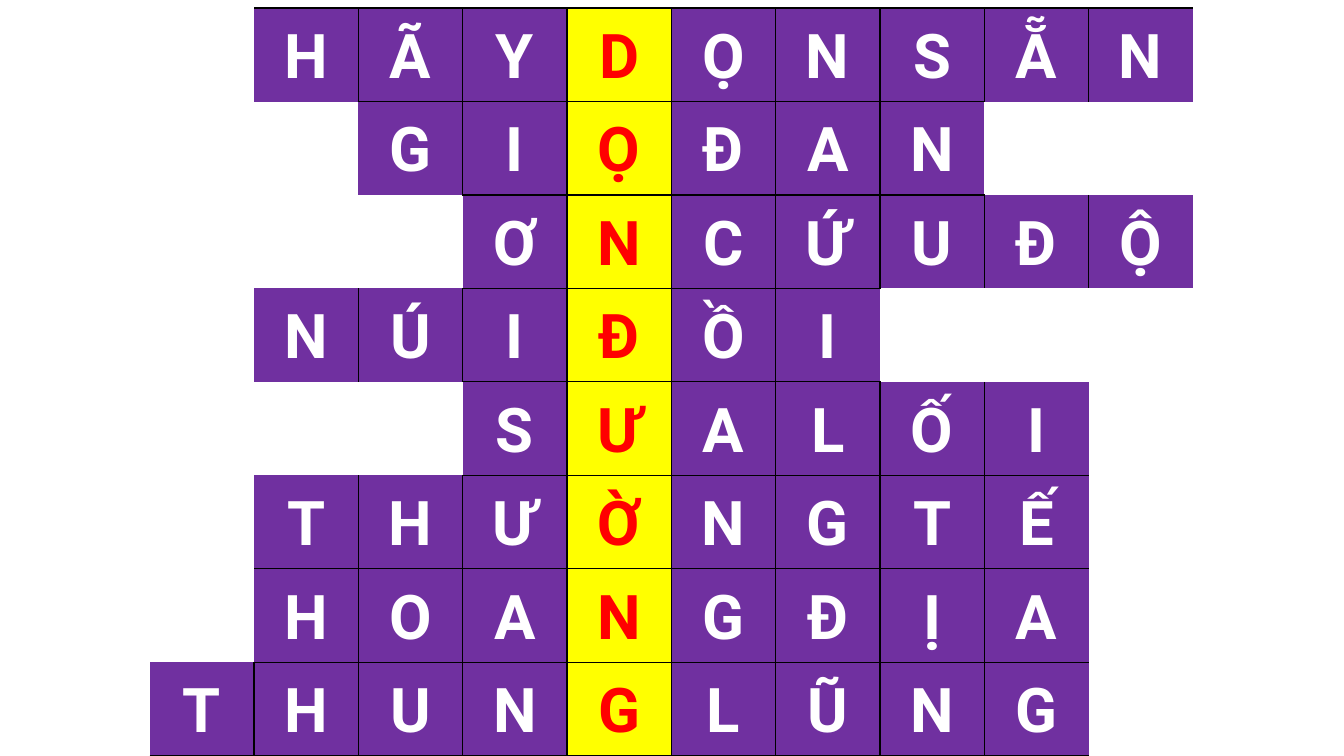
from dataclasses import dataclass

from lxml import etree
from pptx import Presentation
from pptx.dml.color import RGBColor
from pptx.enum.text import MSO_ANCHOR, PP_ALIGN
from pptx.oxml.ns import qn
from pptx.table import Table, _Cell
from pptx.util import Emu, Inches, Pt

CENTER = PP_ALIGN.CENTER
MIDDLE = MSO_ANCHOR.MIDDLE

WHITE = RGBColor(0xFF, 0xFF, 0xFF)
PURPLE = RGBColor(0x70, 0x30, 0xA0)
YELLOW = RGBColor(0xFF, 0xFF, 0x00)
RED = RGBColor(0xFF, 0x00, 0x00)
BLACK = RGBColor(0x00, 0x00, 0x00)

FONT = "Roboto"
COLUMNS = 12
KEY_COLUMN = 5
BORDER = Pt(1)

SLIDE_WIDTH, SLIDE_HEIGHT = Inches(13.33), Inches(7.5)
LEFT, TOP = Inches(0.45), Inches(0.08)
COLUMN, ROW = Inches(12.42 / COLUMNS), Inches(7.42 / 8)

# Border tag -> step (rows, columns) to the neighbour, in schema order
SIDES = {"a:lnL": (0, -1), "a:lnR": (0, 1), "a:lnT": (-1, 0), "a:lnB": (1, 0)}


@dataclass(frozen=True)
class Answer:
    letters: str
    start: int  # grid column of the first letter

    def letter_at(self, column: int) -> str:
        index = column - self.start
        return self.letters[index] if 0 <= index < len(self.letters) else ""


ANSWERS = [
    Answer("HÃYDỌNSẴN", 2),
    Answer("GIỌĐAN", 3),
    Answer("ƠNCỨUĐỘ", 4),
    Answer("NÚIĐỒI", 2),
    Answer("SƯALỐI", 4),
    Answer("THƯỜNGTẾ", 2),
    Answer("HOANGĐỊA", 2),
    Answer("THUNGLŨNG", 1),
]


def has_border(row: int, column: int, step: tuple[int, int]) -> bool:
    """Lines part two letters, and close the grid above and below."""
    if not ANSWERS[row].letter_at(column):
        return False
    next_row, next_column = row + step[0], column + step[1]
    if not 0 <= next_row < len(ANSWERS):
        return True
    return bool(ANSWERS[next_row].letter_at(next_column))


def add_borders(cell: _Cell, row: int, column: int) -> None:
    properties = cell._tc.get_or_add_tcPr()
    for tag, step in SIDES.items():
        line = etree.SubElement(properties, qn(tag), w=str(BORDER))
        if has_border(row, column, step):
            fill = etree.SubElement(line, qn("a:solidFill"))
            etree.SubElement(fill, qn("a:srgbClr"), val=str(BLACK))
        else:
            etree.SubElement(line, qn("a:noFill"))


def write_letter(cell: _Cell, letter: str, color: RGBColor) -> None:
    cell.vertical_anchor = MIDDLE
    cell.margin_left = cell.margin_right = Inches(0.07)
    cell.margin_top = cell.margin_bottom = Emu(0)
    para = cell.text_frame.paragraphs[0]
    para.alignment = CENTER
    para.line_spacing = 1.07
    para.space_after = Pt(8)
    span = para.add_run()
    span.text = letter
    span.font.name = FONT
    span.font.size = Pt(44)
    span.font.bold = True
    span.font.color.rgb = color


def fill_cell(table: Table, row: int, column: int) -> None:
    cell = table.cell(row, column)
    letter = ANSWERS[row].letter_at(column)
    is_key = column == KEY_COLUMN
    add_borders(cell, row, column)
    cell.fill.solid()
    cell.fill.fore_color.rgb = WHITE
    if letter:
        cell.fill.fore_color.rgb = YELLOW if is_key else PURPLE
        write_letter(cell, letter, RED if is_key else WHITE)


def main() -> None:
    deck = Presentation()
    deck.slide_width, deck.slide_height = SLIDE_WIDTH, SLIDE_HEIGHT
    page = deck.slides.add_slide(deck.slide_layouts[6])

    # Crossword grid
    table = page.shapes.add_table(
        len(ANSWERS), COLUMNS, LEFT, TOP, COLUMN * COLUMNS, ROW * len(ANSWERS)
    ).table
    table.first_row = table.horz_banding = False
    for row in range(len(ANSWERS)):
        for column in range(COLUMNS):
            fill_cell(table, row, column)

    deck.save("out.pptx")


if __name__ == "__main__":
    main()
